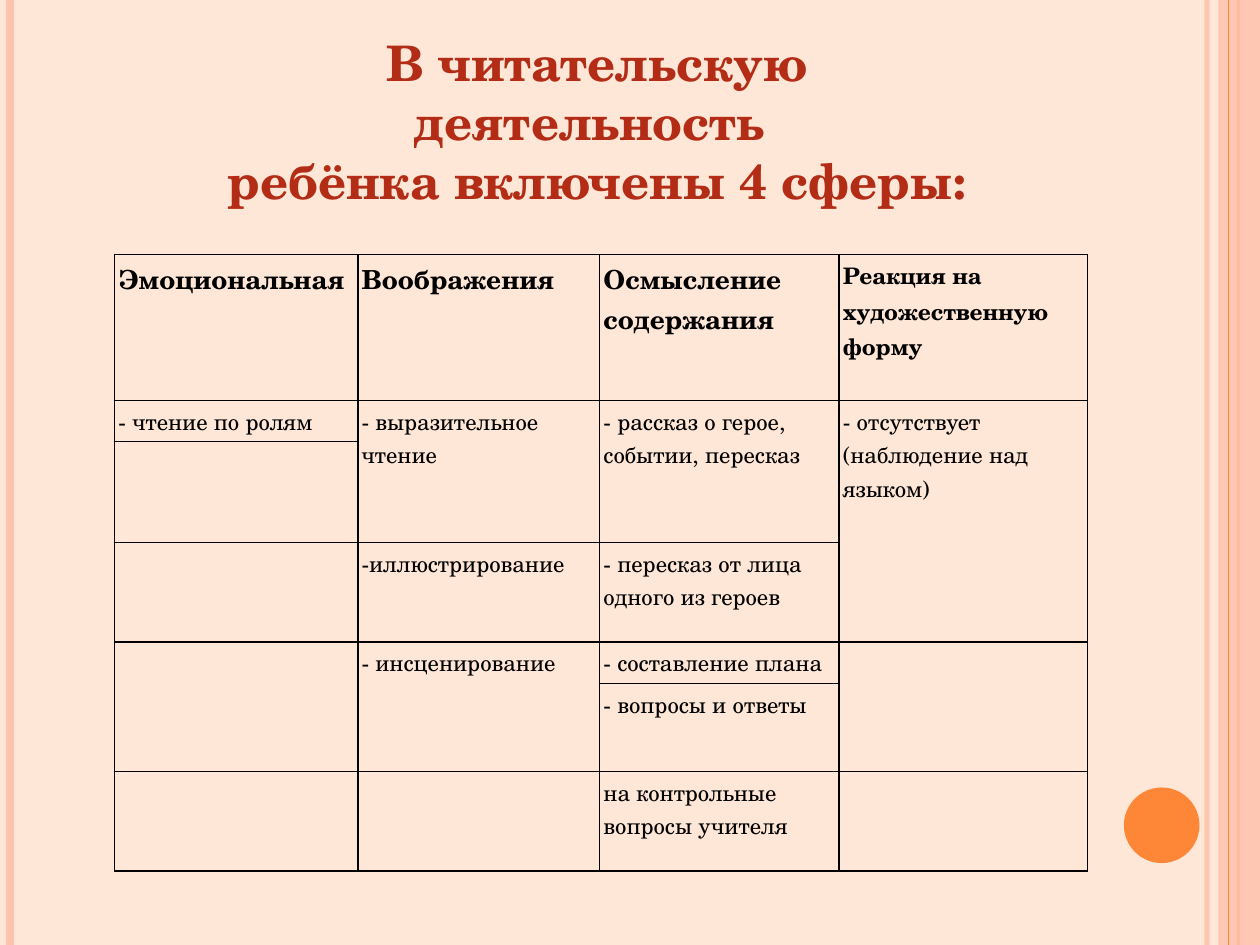
from dataclasses import dataclass

import pptx
import pptx.dml.color
import pptx.enum.shapes
import pptx.enum.text
import pptx.oxml.ns
import pptx.util
from lxml import etree

WIDTH, HEIGHT = pptx.util.Inches(10), pptx.util.Inches(7.5)


@dataclass(frozen=True)
class Theme:
    font: str = "TeX Gyre Schola"
    background: str = "FFE7D7"
    stripe: str = "FEC3AE"
    accent: str = "FE8637"
    title: str = "B32C16"
    ink: str = "000000"
    title_size: float = 28
    head_size: float = 15
    body_size: float = 13
    border: float = 1


@dataclass(frozen=True)
class Stripe:
    x: float  # share of the slide width
    color: str
    weight: float
    opacity: int = 100


@dataclass(frozen=True)
class Entry:
    row: int
    col: int
    text: str = ""
    rows: int = 1
    bold: bool = False
    size: float = Theme.body_size


THEME = Theme()
BACK_STRIPES = [
    Stripe(0.958, THEME.stripe, 3, 93),
    Stripe(0.008, THEME.stripe, 4.5),
    Stripe(0.983, THEME.accent, 1.5),
]
FRONT_STRIPE = Stripe(0.975, THEME.accent, 0.75)

COLUMNS = [1.93, 1.92, 1.9, 1.97]
ROWS = [1.16, 0.32, 0.8, 0.79, 0.33, 0.7, 0.79]
ENTRIES = [
    Entry(0, 0, "Эмоциональная", bold=True, size=THEME.head_size),
    Entry(0, 1, "Воображения", bold=True, size=THEME.head_size),
    Entry(0, 2, "Осмысление\nсодержания", bold=True, size=THEME.head_size),
    Entry(0, 3, "Реакция на\nхудожественную форму", bold=True),
    Entry(1, 0, "- чтение по ролям"),
    Entry(1, 1, "- выразительное\nчтение", rows=2),
    Entry(1, 2, "- рассказ о герое,\nсобытии, пересказ", rows=2),
    Entry(1, 3, "- отсутствует\n(наблюдение над\nязыком)", rows=3),
    Entry(3, 1, "-иллюстрирование"),
    Entry(3, 2, "- пересказ от лица одного из героев"),
    Entry(4, 0, rows=2),
    Entry(4, 1, "- инсценирование", rows=2),
    Entry(4, 2, "- составление плана"),
    Entry(4, 3, rows=2),
    Entry(5, 2, "- вопросы и ответы"),
    Entry(6, 2, "на контрольные вопросы учителя"),
]


def rgb(color: str) -> pptx.dml.color.RGBColor:
    return pptx.dml.color.RGBColor.from_string(color)


def sub(parent, tag: str, **attrs: str):
    return etree.SubElement(parent, pptx.oxml.ns.qn(tag), **attrs)


def set_opacity(sp, percent: int) -> None:
    for clr in sp._element.spPr.iter(pptx.oxml.ns.qn("a:srgbClr")):
        sub(clr, "a:alpha", val=str(percent * 1000))


def format_paragraph(p, size: float, color: str, bold: bool) -> None:
    for r in p.runs:
        r.font.name = THEME.font
        r.font.size = pptx.util.Pt(size)
        r.font.bold = bold
        r.font.color.rgb = rgb(color)


def add_stripe(slide, stripe: Stripe) -> None:
    x = int(WIDTH * stripe.x)
    line = slide.shapes.add_connector(
        pptx.enum.shapes.MSO_CONNECTOR.STRAIGHT, x, 0, x, HEIGHT)
    line.line.color.rgb = rgb(stripe.color)
    line.line.width = pptx.util.Pt(stripe.weight)
    if stripe.opacity < 100:
        set_opacity(line, stripe.opacity)
    sub(line._element.spPr, "a:effectLst")


def add_plain_shape(slide, kind, box: tuple, color: str):
    """Draw an outlineless shape; box holds left, top, width, height in inches."""
    sp = slide.shapes.add_shape(kind, *map(pptx.util.Inches, box))
    sp.shadow.inherit = False
    sp.fill.solid()
    sp.fill.fore_color.rgb = rgb(color)
    sp.line.fill.background()
    return sp


def add_decoration(slide) -> None:
    shape = pptx.enum.shapes.MSO_SHAPE
    for stripe in BACK_STRIPES:
        add_stripe(slide, stripe)
    band = add_plain_shape(slide, shape.RECTANGLE, (9.67, 0, 0.33, 7.5), THEME.stripe)
    set_opacity(band, 87)
    add_stripe(slide, FRONT_STRIPE)
    add_plain_shape(slide, shape.OVAL, (8.92, 6.25, 0.6, 0.6), THEME.accent)


def set_title(slide) -> None:
    title = slide.shapes.title
    title.left, title.top, title.width, title.height = map(
        pptx.util.Inches, (1.59, 0.21, 6.29, 1.5))
    tf = title.text_frame
    tf.text = "В читательскую деятельность \nребёнка включены 4 сферы:"
    tf.word_wrap = True
    tf.auto_size = pptx.enum.text.MSO_AUTO_SIZE.NONE
    tf.vertical_anchor = pptx.enum.text.MSO_ANCHOR.TOP
    for p in tf.paragraphs:
        p.alignment = pptx.enum.text.PP_ALIGN.CENTER
        format_paragraph(p, THEME.title_size, THEME.title, True)


def style_cell(cell) -> None:
    """Give a cell no fill, thin margins, solid borders and a small empty line."""
    cell.fill.background()
    margin = pptx.util.Inches(0.03)
    cell.margin_left = cell.margin_right = margin
    cell.margin_top = cell.margin_bottom = margin
    tc_pr = cell._tc.get_or_add_tcPr()
    for i, side in enumerate(("a:lnL", "a:lnR", "a:lnT", "a:lnB")):
        ln = sub(tc_pr, side, w=str(pptx.util.Pt(THEME.border)))
        sub(sub(ln, "a:solidFill"), "a:srgbClr", val=THEME.ink)
        tc_pr.insert(i, ln)
    sub(cell.text_frame.paragraphs[0]._p, "a:endParaRPr",
        sz=str(int(THEME.body_size * 100)))


def fill_entry(table, entry: Entry) -> None:
    cell = table.cell(entry.row, entry.col)
    if entry.rows > 1:
        cell.merge(table.cell(entry.row + entry.rows - 1, entry.col))
    if not entry.text:
        return
    cell.text_frame.text = entry.text
    for p in cell.text_frame.paragraphs:
        format_paragraph(p, entry.size, THEME.ink, entry.bold)


def add_spheres_table(slide) -> None:
    box = map(pptx.util.Inches, (0.91, 2.02, sum(COLUMNS), sum(ROWS)))
    table = slide.shapes.add_table(len(ROWS), len(COLUMNS), *box).table
    table.first_row = table.horz_banding = False
    for column, width in zip(table.columns, COLUMNS):
        column.width = pptx.util.Inches(width)
    for row, height in zip(table.rows, ROWS):
        row.height = pptx.util.Inches(height)
    for cell in table.iter_cells():
        style_cell(cell)
    for entry in ENTRIES:
        fill_entry(table, entry)


def main() -> None:
    prs = pptx.Presentation()
    prs.slide_width, prs.slide_height = WIDTH, HEIGHT
    slide = prs.slides.add_slide(prs.slide_layouts[5])
    slide.background.fill.solid()
    slide.background.fill.fore_color.rgb = rgb(THEME.background)
    add_decoration(slide)
    add_spheres_table(slide)
    set_title(slide)
    prs.save("out.pptx")


if __name__ == "__main__":
    main()
